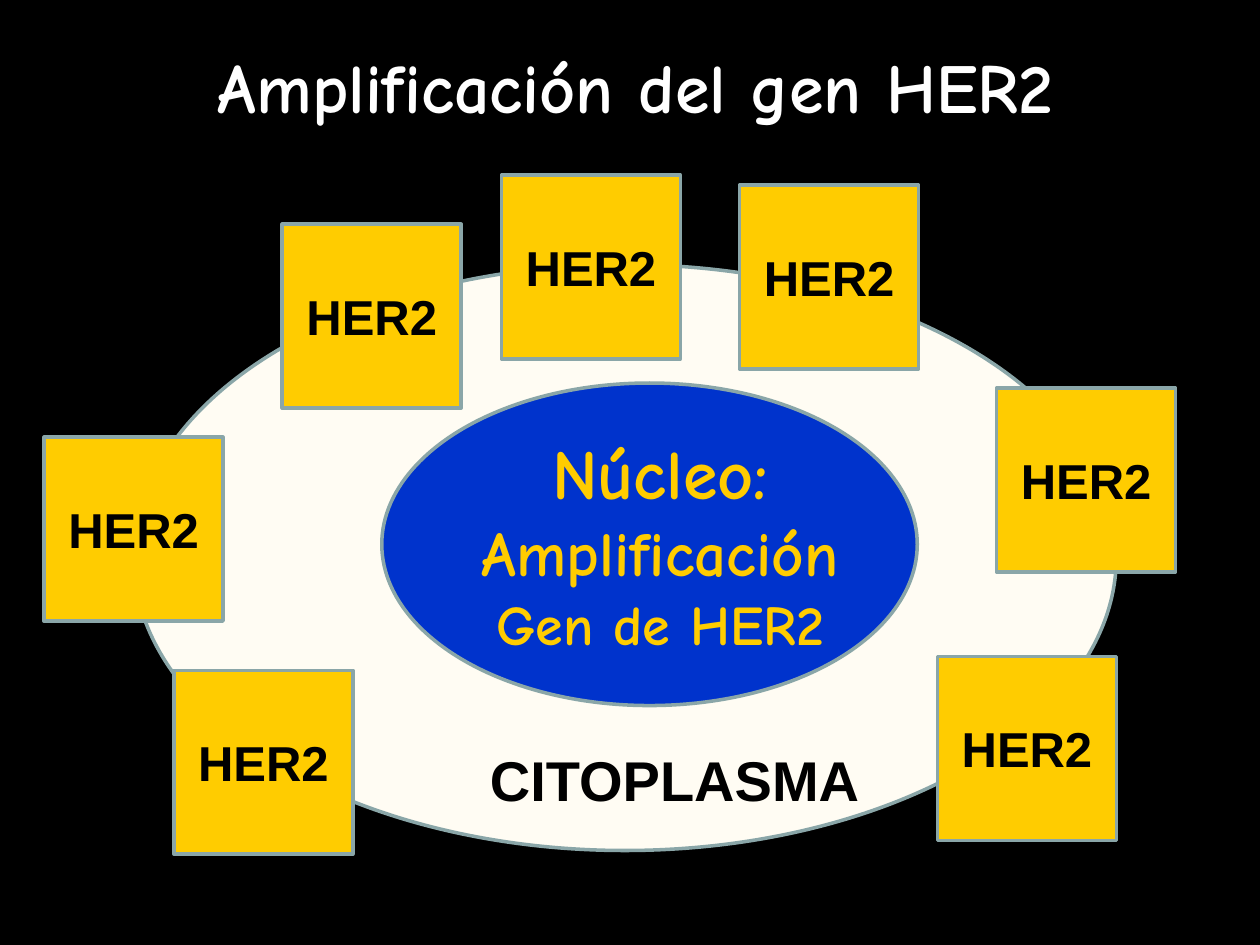
from pptx import Presentation
from pptx.dml.color import RGBColor
from pptx.enum import shapes, text
from pptx.util import Inches, Pt

THEME = {
    "background": "000000", "white": "FFFFFF", "cytoplasm": "FFFCF3",
    "nucleus": "0033CC", "gold": "FFCC00", "outline": "8AA6A8", "black": "000000",
    "hand": "Comic Neue", "sans": "Arial",
    "large": 40, "medium": 36, "small": 32, "gene": 28, "line": 2,
}

TITLE = ("Amplificación del gen HER2", (0.2, 0.05, 9.69, 1.25))
CYTOPLASM = (1.06, 2.1, 7.8, 4.65)
NUCLEUS = (3.03, 3.04, 4.25, 2.56)
NUCLEUS_TEXT = [
    [("Núcleo:", "large")],
    [("Amplificación ", "medium"), ("Gen de HER2", "small")],
]
NUCLEUS_TEXT_AREA = (3.43, 3.36, 3.62, 1.92)
CYTOPLASM_LABEL = ("CITOPLASMA", (3.66, 5.87, 3.39, 0.64))
GENE = "HER2"
GENE_SIZE = (1.42, 1.46)
GENE_CORNERS = [
    (2.24, 1.78), (3.98, 1.39), (5.87, 1.47), (0.35, 3.47),
    (7.91, 3.08), (7.44, 5.21), (1.38, 5.32),
]


def color(name):
    return RGBColor.from_string(THEME[name])


def write(box, paragraphs, font, ink, anchor=text.MSO_ANCHOR.TOP):
    frame = box.text_frame
    frame.word_wrap = True
    frame.vertical_anchor = anchor
    for index, spans in enumerate(paragraphs):
        para = frame.add_paragraph() if index else frame.paragraphs[0]
        para.alignment = text.PP_ALIGN.CENTER
        para.font.name = THEME[font]
        para.font.bold = True
        para.font.color.rgb = color(ink)
        para.font.size = Pt(THEME[spans[0][1]])
        for words, size in spans:
            span = para.add_run()
            span.text = words
            if size != spans[0][1]:
                span.font.size = Pt(THEME[size])


def add_figure(page, kind, area, fill):
    figure = page.shapes.add_shape(kind, *map(Inches, area))
    figure.shadow.inherit = False
    figure.fill.solid()
    figure.fill.fore_color.rgb = color(fill)
    figure.line.color.rgb = color("outline")
    figure.line.width = Pt(THEME["line"])
    return figure


def add_label(page, area, *content):
    write(page.shapes.add_textbox(*map(Inches, area)), *content)


def main():
    deck = Presentation()
    deck.slide_width, deck.slide_height = Inches(10), Inches(7.5)
    page = deck.slides.add_slide(deck.slide_layouts[6])
    page.background.fill.solid()
    page.background.fill.fore_color.rgb = color("background")

    title, area = TITLE
    add_label(page, area, [[(title, "large")]], "hand", "white", text.MSO_ANCHOR.MIDDLE)

    oval = shapes.MSO_SHAPE.OVAL
    add_figure(page, oval, CYTOPLASM, "cytoplasm")
    add_figure(page, oval, NUCLEUS, "nucleus")
    add_label(page, NUCLEUS_TEXT_AREA, NUCLEUS_TEXT, "hand", "gold")

    label, area = CYTOPLASM_LABEL
    add_label(page, area, [[(label, "small")]], "sans", "black")

    for corner in GENE_CORNERS:
        gene = add_figure(page, shapes.MSO_SHAPE.RECTANGLE, corner + GENE_SIZE, "gold")
        write(gene, [[(GENE, "gene")]], "sans", "black", text.MSO_ANCHOR.MIDDLE)

    deck.save("out.pptx")


if __name__ == "__main__":
    main()
